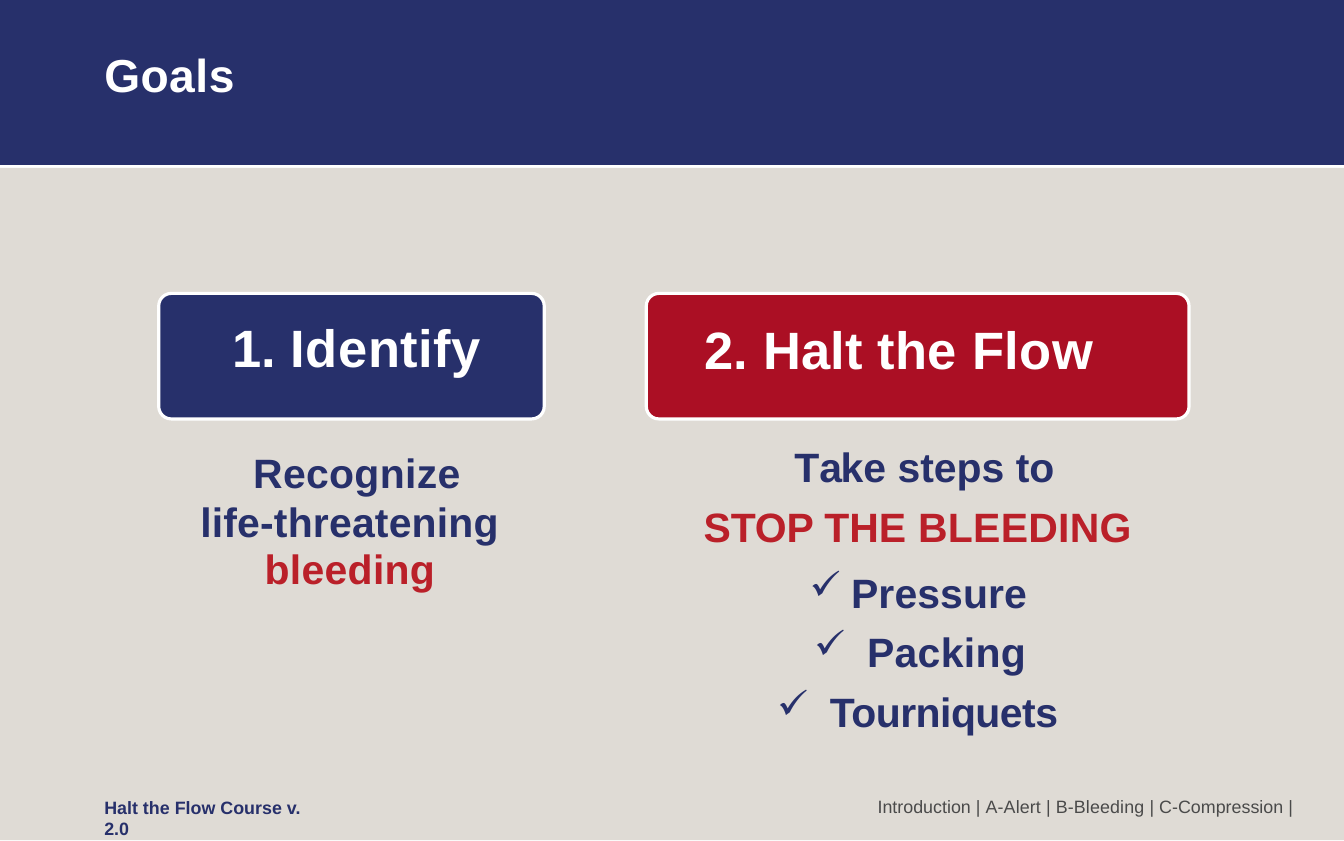
from lxml import etree
from pptx import Presentation
from pptx.dml.color import RGBColor
from pptx.enum.shapes import MSO_SHAPE
from pptx.oxml.ns import qn
from pptx.util import Inches, Pt

RECTANGLE = MSO_SHAPE.RECTANGLE
ROUNDED = MSO_SHAPE.ROUNDED_RECTANGLE
NAVY, CRIMSON, RED = "27306B", "AB0F24", "BA2029"
WHITE, SAND, GREY = "FFFFFF", "D7D2CB", "4A4A4A"


def add_panel(kind, box, color):
    panel = slide.shapes.add_shape(kind, *map(Inches, box))
    panel.shadow.inherit = False
    panel.fill.solid()
    panel.fill.fore_color.rgb = RGBColor.from_string(color)
    panel.line.fill.background()
    return panel


def add_text(box, size, bold, paragraphs, top_inset=0.01, wrap=False):
    frame = slide.shapes.add_textbox(*map(Inches, box)).text_frame
    margins = {"margin_left": 0, "margin_right": 0, "margin_bottom": 0,
               "margin_top": Inches(top_inset), "word_wrap": wrap}
    for key, value in margins.items():
        setattr(frame, key, value)
    for index, (layout, runs) in enumerate(paragraphs):
        paragraph = frame.add_paragraph() if index else frame.paragraphs[0]
        paragraph.space_before = Pt(layout.get("before", 0))
        paragraph.line_spacing = layout.get("spacing", 1.0)
        properties = paragraph._p.get_or_add_pPr()
        properties.set("marL", str(Inches(layout.get("left", 0.01))))
        properties.set("indent", str(Inches(layout.get("indent", 0))))
        if "bullet" in layout:
            etree.SubElement(properties, qn("a:buSzPct")).set("val", "97000")
            etree.SubElement(properties, qn("a:buChar")).set("char", layout["bullet"])
        for text, color, tracking in runs:
            if text == "\n":
                paragraph.add_line_break()
                continue
            run = paragraph.add_run()
            run.text = text
            font = {"name": "Arial", "size": Pt(size), "bold": bold}
            for key, value in font.items():
                setattr(run.font, key, value)
            run.font.color.rgb = RGBColor.from_string(color)
            run._r.get_or_add_rPr().set("spc", str(round(tracking * 100)))


prs = Presentation()
prs.slide_width, prs.slide_height = Inches(17.78), Inches(11.12)
slide = prs.slides.add_slide(prs.slide_layouts[6])

backdrop = add_panel(RECTANGLE, (0, 2.22, 17.78, 8.89), SAND)
backdrop_color = backdrop.fill._xPr.find(qn("a:solidFill"))[0]
etree.SubElement(backdrop_color, qn("a:alpha")).set("val", "80000")
add_panel(RECTANGLE, (0, 0, 17.78, 2.18), NAVY)

for left, width, color in ((2.1, 5.1, NAVY), (8.55, 7.18, CRIMSON)):
    goal = add_panel(ROUNDED, (left, 3.88, width, 1.66), color)
    goal.adjustments[0] = 0.1
    goal.line.color.rgb = RGBColor.from_string(WHITE)
    goal.line.width = Pt(3)

add_text((1.37, 0.6, 1.75, 0.76), 44, True, [
    ({"before": 1}, [("Go", WHITE, 0.3), ("al", WHITE, 0.5), ("s", WHITE, 0)])])
add_text((3.06, 4.16, 3.33, 0.86), 50, True, [
    ({"before": 1.1}, [("1. ", WHITE, 0.1), ("Identify", WHITE, 0.5)])])
add_text((9.31, 4.18, 5.81, 0.86), 50, True, [
    ({"before": 1.1}, [("2. ", WHITE, 0.1), ("Halt the ", WHITE, 0.2),
                       ("Flow", WHITE, 0.5)])])

add_text((2.64, 5.89, 3.99, 1.97), 39, True, [
    ({"indent": 0.7, "spacing": Pt(46.1), "before": 3.1},
     [("Recognize", NAVY, 0.3), ("\n", NAVY, 0), ("life-threatening", NAVY, 0.2)]),
    ({"left": 0.86, "spacing": Pt(45.4)}, [("bleeding", RED, 0.3)]),
], top_inset=0.04, wrap=True)

steps = [({"indent": 1.2, "spacing": 1.22, "before": 1},
          [("T", NAVY, -4.3), ("ak", NAVY, -1.5), ("e steps to", NAVY, 0),
           ("\n", NAVY, 0), ("STOP ", RED, -0.2), ("THE ", RED, 0.1),
           ("BLEEDING", RED, 0.3)])]
for method, left, indent, before, tracking in (
        ("Pressure", 1.96, -0.55, 15.7, 0.1),
        ("Packing", 2.17, -0.7, 9.6, 0.3),
        ("Tourniquets", 1.68, -0.7, 10.1, -0.5)):
    steps.append(({"left": left, "indent": indent, "before": before, "bullet": "✓"},
                  [(method, NAVY, tracking)]))
add_text((9.3, 5.69, 5.71, 4.06), 39, True, steps, wrap=True)

footer = {"spacing": Pt(19.9)}
add_text((11.6, 10.53, 5.54, 0.29), 17, False, [
    (footer, [("Introduction | ", GREY, 0), ("A-Alert ", GREY, 0.1), ("| ", GREY, 0),
              ("B-Bleeding ", GREY, 0.1), ("| C-Compression |", GREY, 0)])], top_inset=0)
add_text((1.37, 10.54, 3.19, 0.29), 17, True, [
    (footer, [("Halt the Flow Course v.", NAVY, 0), ("\n", NAVY, 0),
              ("2.0", NAVY, 0)])], top_inset=0, wrap=True)

prs.save("out.pptx")
